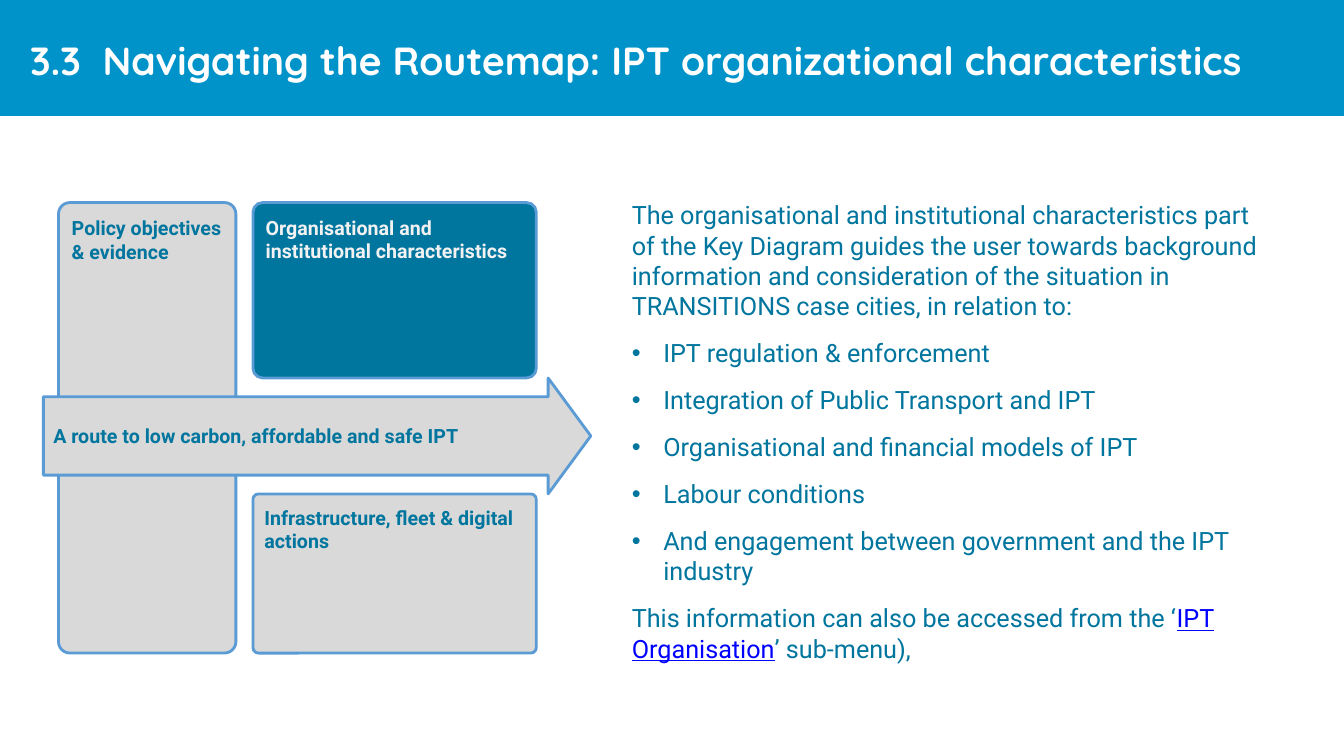
from lxml import etree
from pptx import Presentation
from pptx.dml.color import RGBColor
from pptx.enum.shapes import MSO_SHAPE
from pptx.enum.text import MSO_ANCHOR, PP_ALIGN
from pptx.oxml.ns import qn
from pptx.util import Pt

RECTANGLE = MSO_SHAPE.RECTANGLE
ROUNDED = MSO_SHAPE.ROUNDED_RECTANGLE
ARROW = MSO_SHAPE.RIGHT_ARROW
TOP, MIDDLE = MSO_ANCHOR.TOP, MSO_ANCHOR.MIDDLE

COLORS = {
    "white": "FFFFFF", "banner": "0093CA", "teal": "00759E", "gray": "D9D9D9",
    "outline": "5B9BD5", "pale": "F2F2F2", "link": "0000FF",
}
PAGE_WIDTH, PAGE_HEIGHT = 960, 540
BANNER_HEIGHT = 82.8
INSET = 7.2
INDENT = 22.5

TITLE = "3.3  Navigating the Routemap: IPT organizational characteristics"
INTRO = (
    "The organisational and institutional characteristics part of the Key Diagram "
    "guides the user towards background information and consideration of the "
    "situation in TRANSITIONS case cities, in relation to:"
)
TOPICS = [
    "IPT regulation & enforcement",
    "Integration of Public Transport and IPT",
    "Organisational and financial models of IPT",
    "Labour conditions",
    "And engagement between government and the IPT industry",
]
CLOSING = ["This information can also be accessed from the ‘", "IPT Organisation", "’ sub-menu),"]

# Diagram edges
DIAGRAM_TOP, DIAGRAM_BOTTOM = 144.7, 466.5
POLICY_LEFT, POLICY_WIDTH = 41.8, 126.7
STAGE_LEFT, STAGE_WIDTH = 180.7, 202.4
ARROW_LEFT, ARROW_TOP, ARROW_WIDTH, ARROW_HEIGHT = 31, 270, 391, 82.8
ARROW_BOTTOM = ARROW_TOP + ARROW_HEIGHT

POLICY = (ROUNDED, (POLICY_LEFT, DIAGRAM_TOP, POLICY_WIDTH, DIAGRAM_BOTTOM - DIAGRAM_TOP),
          [0.064], "gray", "teal", TOP, ["Policy objectives & evidence"])
ROUTE = (ARROW, (ARROW_LEFT, ARROW_TOP, ARROW_WIDTH, ARROW_HEIGHT),
         [0.676, 0.368], "gray", "teal", MIDDLE,
         ["A route to low carbon, affordable and safe IPT"])
ORGANISATION = (ROUNDED, (STAGE_LEFT, DIAGRAM_TOP, STAGE_WIDTH, ARROW_TOP - DIAGRAM_TOP),
                [0.055], "teal", "pale", TOP,
                ["Organisational and", "institutional characteristics"])
INFRASTRUCTURE = (ROUNDED, (STAGE_LEFT, ARROW_BOTTOM, STAGE_WIDTH, DIAGRAM_BOTTOM - ARROW_BOTTOM),
                  [0.034], "gray", "teal", TOP,
                  ["Infrastructure, fleet & digital actions"])


def rgb(name):
    return RGBColor.from_string(COLORS[name])


def add_box(page, kind, bounds, fill, outline=None, adjustments=()):
    box = page.shapes.add_shape(kind, *map(Pt, bounds))
    box.shadow.inherit = False
    for index, value in enumerate(adjustments):
        box.adjustments[index] = value
    box.fill.solid()
    box.fill.fore_color.rgb = rgb(fill)
    if outline:
        box.line.color.rgb = rgb(outline)
        box.line.width = Pt(2)
    else:
        box.line.fill.background()
    return box


def prepare_text(box, insets=(INSET,) * 4, anchor=TOP):
    frame = box.text_frame
    frame.word_wrap = True
    frame.vertical_anchor = anchor
    frame.margin_left, frame.margin_top, frame.margin_right, frame.margin_bottom = map(Pt, insets)
    return frame


def add_paragraph(frame, first=False, bullet=False, space_after=0):
    para = frame.paragraphs[0] if first else frame.add_paragraph()
    para.alignment = PP_ALIGN.LEFT
    para.space_after = Pt(space_after)
    if bullet:
        properties = para._p.get_or_add_pPr()
        properties.set("marL", str(Pt(INDENT)))
        properties.set("indent", str(-Pt(INDENT)))
        etree.SubElement(properties, qn("a:buFont")).set("typeface", "Arial")
        etree.SubElement(properties, qn("a:buChar")).set("char", "•")
    return para


def add_text(para, text, size=18, font="Roboto", color="teal", bold=False, underline=False):
    span = para.add_run()
    span.text = text
    span.font.size = Pt(size)
    span.font.name = font
    span.font.color.rgb = rgb(color)
    span.font.bold = bold
    span.font.underline = underline


def add_stage(page, kind, bounds, adjustments, fill, color, anchor, lines):
    """Draw one outlined part of the route diagram with its label."""
    box = add_box(page, kind, bounds, fill, "outline", adjustments)
    frame = prepare_text(box, anchor=anchor)
    for index, line in enumerate(lines):
        add_text(add_paragraph(frame, first=index == 0), line, size=14, color=color, bold=True)


def add_title(page):
    add_box(page, RECTANGLE, (0, 0, PAGE_WIDTH, BANNER_HEIGHT), "banner")
    box = page.shapes.add_textbox(Pt(21.6), Pt(20), Pt(PAGE_WIDTH - 21.6), Pt(46))
    frame = prepare_text(box, (0, 5.8, 11.5, 5.8))
    add_text(add_paragraph(frame, first=True), TITLE, size=28, font="Quicksand",
             color="white", bold=True)


def add_description(page):
    panel = add_box(page, RECTANGLE, (444.2, 135.4, 473.8, 351.4), "white")
    fill_color = panel._element.spPr.find(qn("a:solidFill"))[0]
    etree.SubElement(fill_color, qn("a:alpha")).set("val", "76000")
    frame = prepare_text(panel)
    add_text(add_paragraph(frame, first=True, space_after=12), INTRO)
    for topic in TOPICS:
        add_text(add_paragraph(frame, bullet=True, space_after=12), topic)
    closing = add_paragraph(frame, space_after=12)
    before, link, after = CLOSING
    add_text(closing, before)
    add_text(closing, link, color="link", underline=True)
    add_text(closing, after)


def main():
    deck = Presentation()
    deck.slide_width, deck.slide_height = Pt(PAGE_WIDTH), Pt(PAGE_HEIGHT)
    page = deck.slides.add_slide(deck.slide_layouts[6])
    add_stage(page, *POLICY)
    add_title(page)
    add_description(page)
    for stage in (ROUTE, ORGANISATION, INFRASTRUCTURE):
        add_stage(page, *stage)
    deck.save("out.pptx")


if __name__ == "__main__":
    main()
